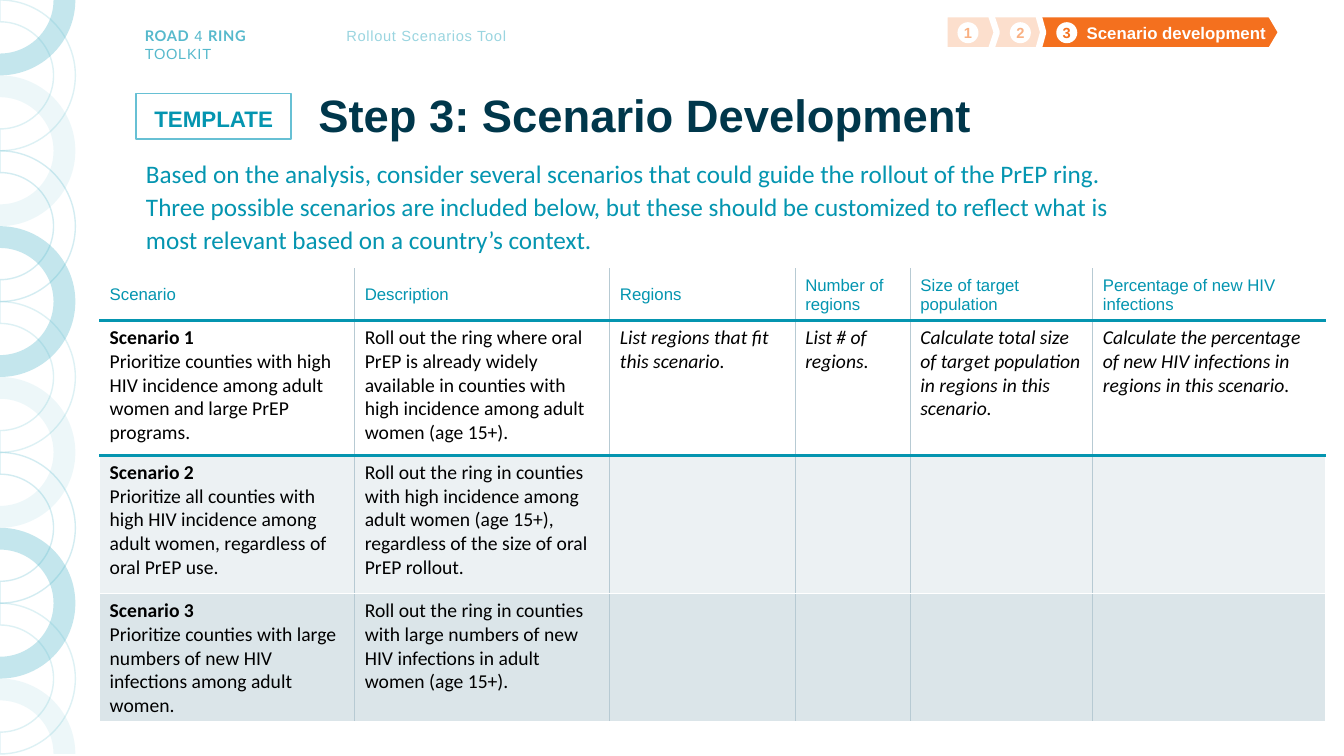
"""Builds the scenario development template slide of a rollout toolkit."""
from math import cos, radians, sin

from lxml import etree
from pptx import Presentation
from pptx.dml.color import RGBColor
from pptx.enum.shapes import MSO_SHAPE as Preset
from pptx.enum.text import MSO_ANCHOR as Anchor, MSO_AUTO_SIZE as AutoSize, PP_ALIGN as Align
from pptx.oxml.ns import qn
from pptx.util import Cm, Pt

WHITE = RGBColor(0xFF, 0xFF, 0xFF)
BLACK = RGBColor(0x00, 0x00, 0x00)
NAVY = RGBColor(0x00, 0x37, 0x4B)
TEAL = RGBColor(0x04, 0x95, 0xB0)
AQUA = RGBColor(0x56, 0xB9, 0xCC)
PALE_AQUA = RGBColor(0x9A, 0xD5, 0xE0)
BADGE_EDGE = RGBColor(0x67, 0xC0, 0xD4)
ORANGE = RGBColor(0xF4, 0x70, 0x1E)
PEACH = RGBColor(0xF9, 0xB0, 0x82)
MIST = RGBColor(0xDB, 0xE5, 0xE9)
RULE = RGBColor(0xB7, 0xCA, 0xD3)


def fade(parent, percent):
    color = parent.find(qn("a:solidFill"))[0]
    etree.SubElement(color, qn("a:alpha"), val=str(percent * 1000))


def write(paragraph, text, size, color, font="Arial", bold=False, italic=False):
    run = paragraph.add_run()
    run.text = text
    run.font.size = Pt(size)
    run.font.name = font
    run.font.bold = bold
    run.font.italic = italic
    run.font.color.rgb = color
    return run


deck = Presentation()
deck.slide_width, deck.slide_height = Cm(33.87), Cm(19.05)
slide = deck.slides.add_slide(deck.slide_layouts[5])
shapes = slide.shapes

ring_styles = [("fill", 35), ("line", 20), ("fill", 10), ("line", 25)]
outer, inner, ring_step = 1.9, 1.35, 1.9
for index in range(11):
    start = 0 if index == 0 else -90
    end = 0 if index == 10 else 90
    angles = list(range(start, end + 1, 90))
    corners = [(outer, a) for a in angles] + [(inner, a) for a in reversed(angles)]
    points = [(Cm(r * cos(radians(a))), Cm(index * ring_step + r * sin(radians(a))))
              for r, a in corners]
    builder = shapes.build_freeform(*points[0], scale=1.0)
    builder.add_line_segments(points[1:], close=True)
    ring = builder.convert_to_shape()
    ring.shadow.inherit = False
    segments = list(ring._element.iter(qn("a:lnTo")))
    for segment, (radius, angle), (next_radius, next_angle) in zip(segments, corners, corners[1:]):
        if radius == next_radius:
            curve = etree.Element(qn("a:arcTo"), wR=str(Cm(radius)), hR=str(Cm(radius)),
                                  stAng=str(angle % 360 * 60000),
                                  swAng=str((next_angle - angle) * 60000))
            segment.getparent().replace(segment, curve)
    kind, opacity = ring_styles[index % 4]
    if kind == "fill":
        ring.fill.solid()
        ring.fill.fore_color.rgb = AQUA
        ring.line.fill.background()
        fade(ring._element.spPr, opacity)
    else:
        ring.fill.background()
        ring.line.color.rgb = AQUA
        ring.line.width = Pt(1)
        fade(ring._element.spPr.find(qn("a:ln")), opacity)

header_labels = [
    (3.4, AQUA, [("ROAD", "Lato", True), (" 4 ", "Arial", False),
                 ("RING ", "Lato", True), ("TOOLKIT", "Arial", False)]),
    (8.48, PALE_AQUA, [("Rollout Scenarios Tool", "Arial", False)]),
]
for left, color, parts in header_labels:
    label = shapes.add_textbox(Cm(left), Cm(0.56), Cm(4.67), Cm(0.71)).text_frame
    label.word_wrap = True
    for text, font, bold in parts:
        if text == "TOOLKIT":
            label.paragraphs[0].add_line_break()
        run = write(label.paragraphs[0], text, 10.5, color, font, bold)
        run._r.get_or_add_rPr().set("spc", "50")

badge = shapes.add_shape(Preset.RECTANGLE, Cm(3.43), Cm(2.36), Cm(3.91), Cm(1.14))
badge.shadow.inherit = False
badge.fill.solid()
badge.fill.fore_color.rgb = WHITE
badge.line.color.rgb = BADGE_EDGE
badge.line.width = Pt(1)
badge_text = badge.text_frame
badge_text.word_wrap = False
badge_text.vertical_anchor = Anchor.TOP
badge_text.margin_top, badge_text.margin_bottom = Cm(0.2), 0
badge_text.paragraphs[0].alignment = Align.CENTER
badge_text.paragraphs[0].line_spacing = 1.15
write(badge_text.paragraphs[0], "TEMPLATE", 16, TEAL, bold=True)

steps = [
    ("3", 26.14, 6.15, 0.295, 26.62, ORANGE, "Scenario development"),
    ("2", 24.97, 1.32, 0.138, 25.45, PEACH, ""),
    ("1", 23.8, 1.32, 0.164, 24.13, PEACH, ""),
]
for number, left, width, point, dot_left, color, caption in steps:
    plate = shapes.add_shape(Preset.PENTAGON, Cm(left), Cm(0.36), Cm(width), Cm(0.91))
    plate.adjustments[0] = point
    dot = shapes.add_shape(Preset.OVAL, Cm(dot_left), Cm(0.56), Cm(0.53), Cm(0.53))
    for part, fill in ((plate, color), (dot, WHITE)):
        part.shadow.inherit = False
        part.fill.solid()
        part.fill.fore_color.rgb = fill
        part.text_frame.vertical_anchor = Anchor.MIDDLE
    plate.line.color.rgb = WHITE
    plate.line.width = Pt(4.5)
    if caption:
        plate.text_frame.paragraphs[0].alignment = Align.RIGHT
        write(plate.text_frame.paragraphs[0], caption, 12, WHITE, bold=True)
    else:
        fade(plate._element.spPr, 40)
    dot.line.fill.background()
    digit = dot.text_frame
    digit.margin_left = digit.margin_right = digit.margin_top = digit.margin_bottom = 0
    digit.paragraphs[0].alignment = Align.CENTER
    write(digit.paragraphs[0], number, 10.5, color, bold=True)

title = shapes.title
title.left, title.top, title.width, title.height = Cm(7.77), Cm(2.26), Cm(24.1), Cm(1.42)
heading = title.text_frame
heading.auto_size = AutoSize.NONE
heading.vertical_anchor = Anchor.MIDDLE
heading.paragraphs[0].alignment = Align.LEFT
heading.paragraphs[0].line_spacing = 0.9
write(heading.paragraphs[0], "Step 3: Scenario Development", 32.4, NAVY, bold=True)

intro = shapes.add_textbox(Cm(3.43), Cm(3.78), Cm(25), Cm(1.32)).text_frame
intro.word_wrap = True
intro.paragraphs[0].line_spacing = 1.1
intro.paragraphs[0].space_before = Pt(12)
write(intro.paragraphs[0], "Based on the analysis, consider several scenarios that could guide the rollout "
      "of the PrEP ring. Three possible scenarios are included below, but these should be customized "
      "to reflect what is most relevant based on a country’s context.", 18, TEAL, "Calibri")

headings = ["Scenario", "Description", "Regions", "Number of regions",
            "Size of target population", "Percentage of new HIV infections"]
scenarios = [
    ["Prioritize counties with high HIV incidence among adult women and large PrEP programs.",
     "Roll out the ring where oral PrEP is already widely available in counties with high "
     "incidence among adult women (age 15+).",
     "List regions that fit this scenario.", "List # of regions.",
     "Calculate total size of target population in regions in this scenario.",
     "Calculate the percentage of new HIV infections in regions in this scenario."],
    ["Prioritize all counties with high HIV incidence among adult women, regardless of oral PrEP use.",
     "Roll out the ring in counties with high incidence among adult women (age 15+), "
     "regardless of the size of oral PrEP rollout.", "", "", "", ""],
    ["Prioritize counties with large numbers of new HIV infections among adult women.",
     "Roll out the ring in counties with large numbers of new HIV infections in adult women "
     "(age 15+).", "", "", "", ""],
]
column_widths = [6.43, 6.43, 4.67, 2.9, 4.6, 5.87]
row_heights = [1.3, 3.4, 3.48, 2.9]
row_fills = [WHITE, WHITE, MIST, MIST]
edges = [WHITE, TEAL, TEAL, WHITE, WHITE]

table = shapes.add_table(4, 6, Cm(2.51), Cm(6.78), Cm(sum(column_widths)), Cm(sum(row_heights))).table
table.first_row = table.horz_banding = False
for column, width in zip(table.columns, column_widths):
    column.width = Cm(width)
for row, height in zip(table.rows, row_heights):
    row.height = Cm(height)

for r, texts in enumerate([headings] + scenarios):
    for c, text in enumerate(texts):
        cell = table.cell(r, c)
        paragraph = cell.text_frame.paragraphs[0]
        if r == 0:
            cell.vertical_anchor = Anchor.MIDDLE
            write(paragraph, text, 12, TEAL)
        elif text:
            if c == 0:
                write(paragraph, f"Scenario {r}", 14, BLACK, "Calibri", bold=True)
                paragraph = cell.text_frame.add_paragraph()
            write(paragraph, text, 14, BLACK, "Calibri", italic=c > 1)
        properties = cell._tc.get_or_add_tcPr()
        borders = {"a:lnL": RULE if c > 0 else WHITE, "a:lnR": RULE if c < 5 else WHITE,
                   "a:lnT": edges[r], "a:lnB": edges[r + 1]}
        for tag, color in borders.items():
            width = Pt(2.25) if color == TEAL else Pt(1)
            border = etree.SubElement(properties, qn(tag), w=str(width))
            solid = etree.SubElement(border, qn("a:solidFill"))
            etree.SubElement(solid, qn("a:srgbClr"), val=str(color))
        cell.fill.solid()
        cell.fill.fore_color.rgb = row_fills[r]
        if r == 2:
            fade(properties, 50)

deck.save("out.pptx")
